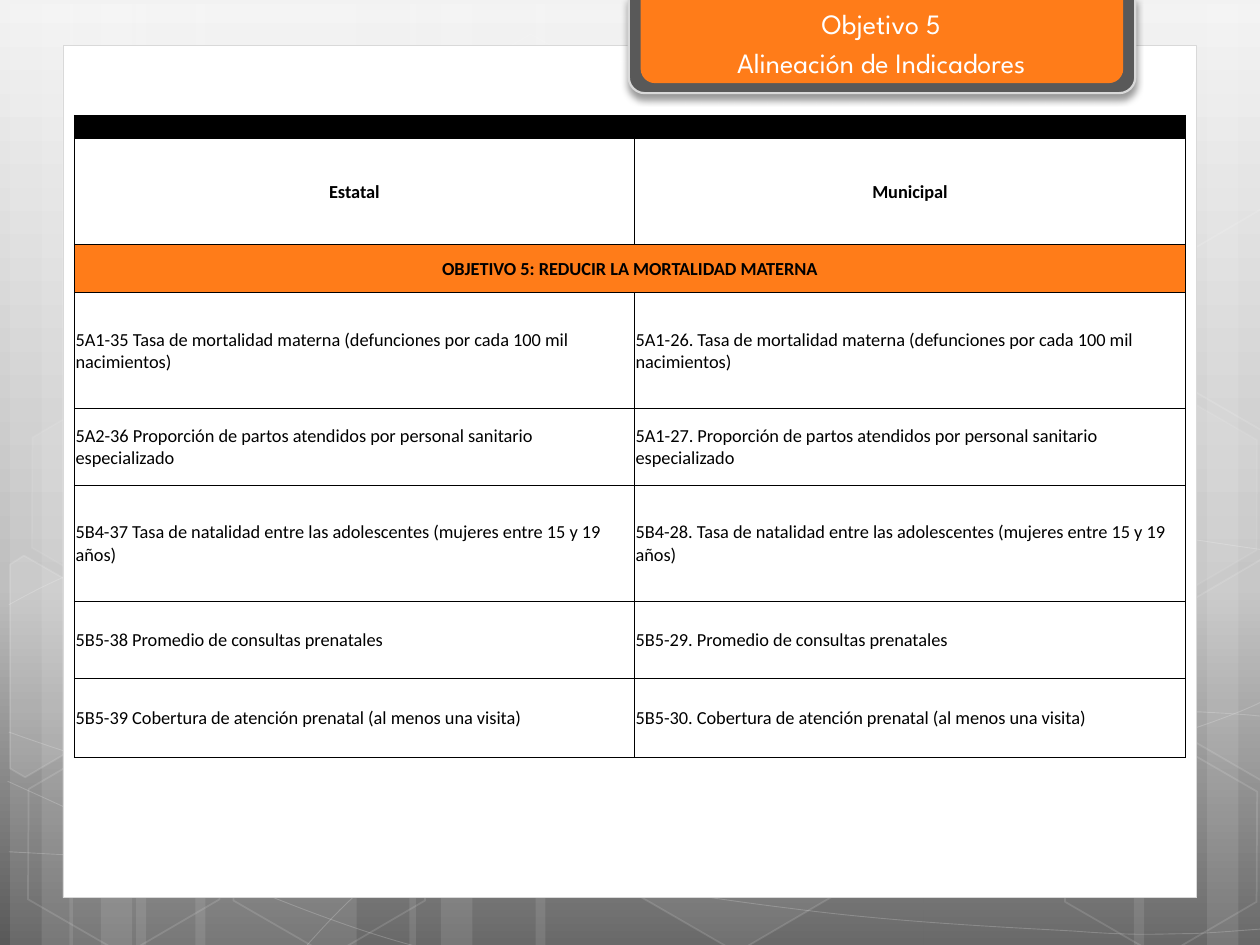
from copy import deepcopy

from lxml import etree
from pptx import Presentation
from pptx.dml.color import RGBColor
from pptx.enum.shapes import MSO_SHAPE
from pptx.enum.text import MSO_ANCHOR, PP_ALIGN
from pptx.oxml.ns import qn
from pptx.util import Inches, Pt

RECT, HEXAGON, TAB = MSO_SHAPE.RECTANGLE, MSO_SHAPE.HEXAGON, MSO_SHAPE.ROUND_2_SAME_RECTANGLE
CENTER, LEFT = PP_ALIGN.CENTER, PP_ALIGN.LEFT
TOP, MIDDLE = MSO_ANCHOR.TOP, MSO_ANCHOR.MIDDLE

# Backdrop, on a grid of 100 columns by 75 rows
BARS = [(10.8, 17.5), (0.8, 5), (3.3, 8.3), (15.5, 17.5), (5.5, 5), (8, 8.3),  # left, width
        (73.3, 17.5), (95.8, 5), (90, 8.3), (42.5, 30.8), (32.5, 5), (35, 8.3)]
# Segment kinds (C takes three points, L takes one), then the points
CURVES = [
    ("CCCC", [
        (0.7, 67.6), (6.1, 67.9), (11.5, 68.2), (19, 68.1), (26.5, 68), (35.8, 67.8), (45.8, 66.8),
        (55.8, 65.8), (70, 63.9), (79.2, 62), (88.3, 60.1), (97.7, 57.1), (100.7, 55.4)]),
    ("CCCC", [
        (0.7, 48), (3.6, 46.4), (6.5, 44.9), (12.1, 43.4), (17.8, 41.9), (25.9, 39.7), (34.7, 39),
        (43.6, 38.3), (54.4, 38.2), (65.4, 39), (76.4, 39.8), (94.7, 42.9), (100.7, 43.7)]),
    ("C", [(0.6, 62), (12.7, 67.5), (24.7, 73), (33.4, 75.2)]),
    ("CCCCCC", [
        (0.7, 58.1), (3.8, 59.2), (7, 60.3), (12.8, 61.9), (18.6, 63.4), (27.3, 65.9), (35.7, 67.6),
        (44, 69.3), (54.5, 71.1), (62.8, 72.1), (71.1, 73.2), (80, 73.6), (85.3, 73.9),
        (90.5, 74.3), (91.9, 74.1), (94.5, 74.1), (97.1, 74), (98.9, 73.8), (100.7, 73.7)]),
    ("CCCCCCCLCC", [
        (24.2, 75.2), (26, 73.2), (27.8, 71.2), (30.2, 69.4), (32.6, 67.6), (36, 65.6),
        (38.8, 64.2), (41.6, 62.8), (43.3, 62.2), (47, 61.2), (50.6, 60.2), (57.3, 58.8),
        (60.8, 58.1), (64.4, 57.4), (64.9, 57.4), (68, 57.2), (71.1, 56.9), (76, 56.6),
        (79.4, 56.5), (82.9, 56.4), (88.6, 56.5), (88.6, 56.5), (95.3, 56.5), (97.1, 56.6),
        (98.8, 56.7), (99.7, 56.8), (100.6, 56.9), (100.3, 56.8), (100.6, 56.9)]),
]
# Left, top, fill opacity, line opacity
HEXAGONS = [(33.4, 3.9, 4, 8), (49.7, 59.2, 6, 12), (1.1, 59.4, 0, 12), (1.4, 31.5, 7, 8),
            (17.4, 59.5, 0, 12), (75.3, 45.6, 10, 12), (83.4, 59.6, 0, 12), (83.4, 31.7, 7, 8)]
# Hexagons cut off by the slide edge: points, fill opacity
CUT_HEXAGONS = [
    ([(0.8, 44.8), (1.9, 44.1), (9.6, 48.5), (9.5, 57.3), (2, 61.7), (0.8, 61)], 10),
    ([(92.6, 48.8), (100.1, 44.4), (100.9, 44.9), (100.9, 61.6), (100.2, 62), (92.6, 57.6)], 4),
    ([(92.6, 21), (100.1, 16.6), (101, 17.1), (100.9, 33.8), (100.2, 34.2), (92.6, 29.8)], 0),
]

# Table: row height, fill, centred heading, texts (one text spans both columns)
ROWS = [
    (1.85, "000000", True, [""]),
    (8.4, "FFFFFF", True, ["Estatal", "Municipal"]),
    (3.8, "FF7C19", True, ["OBJETIVO 5: REDUCIR LA MORTALIDAD MATERNA"]),
    (9.2, "FFFFFF", False,
     ["5A1-35 Tasa de mortalidad materna (defunciones por cada 100 mil nacimientos)",
      "5A1-26. Tasa de mortalidad materna (defunciones por cada 100 mil nacimientos)"]),
    (6.1, "FFFFFF", False,
     ["5A2-36 Proporción de partos atendidos por personal sanitario especializado",
      "5A1-27. Proporción de partos atendidos por personal sanitario especializado"]),
    (9.2, "FFFFFF", False,
     ["5B4-37 Tasa de natalidad entre las adolescentes (mujeres entre 15 y 19 años)",
      "5B4-28. Tasa de natalidad entre las adolescentes (mujeres entre 15 y 19 años)"]),
    (6.1, "FFFFFF", False, ["5B5-38 Promedio de consultas prenatales",
                            "5B5-29. Promedio de consultas prenatales"]),
    (6.3, "FFFFFF", False, ["5B5-39 Cobertura de atención prenatal (al menos una visita)",
                            "5B5-30. Cobertura de atención prenatal (al menos una visita)"]),
]


def rgb(color):
    return RGBColor.from_string(color)


def sub(parent, tag, **attrs):
    return etree.SubElement(parent, qn(tag), {k: str(v) for k, v in attrs.items()})


class Deck:
    COLS, ROWS = 100, 75
    TITLE_FONT, BODY_FONT = "League Spartan", "Calibri"

    def __init__(self, prs):
        self.s = prs.slides.add_slide(prs.slide_layouts[6])
        self.unit_x, self.unit_y = prs.slide_width / self.COLS, prs.slide_height / self.ROWS

    def x(self, cols):
        return round(cols * self.unit_x)

    def y(self, rows):
        return round(rows * self.unit_y)

    def box(self, left, top, width, height):
        return self.x(left), self.y(top), self.x(width), self.y(height)

    def background(self, stops):
        fill = self.s.background.fill
        fill.gradient()
        fill.gradient_angle = 270
        gs_list = fill.gradient_stops[0]._gs.getparent()
        gs_list.insert(1, deepcopy(gs_list[0]))
        for stop, (position, color) in zip(fill.gradient_stops, stops):
            stop.position = position
            stop.color.rgb = rgb(color)

    def paint(self, fill, color, opacity):
        if not opacity:
            fill.background()
            return
        fill.solid()
        fill.fore_color.rgb = rgb(color)
        if opacity < 100:
            sub(fill.fore_color._xFill[0], "a:alpha", val=opacity * 1000)

    def style(self, sp, fill="FFFFFF", opacity=100, line="FFFFFF", line_opacity=0, width=1):
        sp.shadow.inherit = False
        self.paint(sp.fill, fill, opacity)
        self.paint(sp.line.fill, line, line_opacity)
        if line_opacity:
            sp.line.width = Pt(width)
        return sp

    def shape(self, kind, *box, **style):
        return self.style(self.s.shapes.add_shape(kind, *self.box(*box)), **style)

    def outline(self, points, close=False, **style):
        dots = [(self.x(a), self.y(b)) for a, b in points]
        builder = self.s.shapes.build_freeform(*dots[0])
        builder.add_line_segments(dots[1:], close=close)
        return self.style(builder.convert_to_shape(), **style)

    def curve(self, kinds, points, **style):
        sp = self.outline(points, opacity=0, **style)
        steps = iter(list(sp._element.iter(qn("a:lnTo"))))
        for kind in kinds:
            first = next(steps)
            if kind == "C":  # merge three line steps into one Bezier segment
                first.tag = qn("a:cubicBezTo")
                for _ in range(2):
                    step = next(steps)
                    first.append(step[0])
                    step.getparent().remove(step)

    def tab(self, *box, shadow=False, **style):
        sp = self.shape(TAB, *box, **style)
        sp._element.spPr.find(qn("a:xfrm")).set("flipV", "1")
        if shadow:
            outer = sub(sp._element.spPr.find(qn("a:effectLst")), "a:outerShdw", blurRad=Pt(4),
                        dist=Pt(3), dir=5400000, algn="t", rotWithShape=0)
            sub(sub(outer, "a:srgbClr", val="000000"), "a:alpha", val=40000)

    def run(self, p, text, font, size, color, bold=False):
        r = p.add_run()
        r.text = text
        r.font.name, r.font.size, r.font.bold = font, Pt(size), bold
        r.font.color.rgb = rgb(color)

    def title(self, lines, *box):
        tf = self.s.shapes.add_textbox(*self.box(*box)).text_frame
        tf.word_wrap, tf.vertical_anchor = True, TOP
        for i, text in enumerate(lines):
            p = tf.add_paragraph() if i else tf.paragraphs[0]
            p.alignment = CENTER
            if i:
                p.space_before = Pt(3.2)
            self.run(p, text, self.TITLE_FONT, 16, "FFFFFF")

    def cell(self, cell, text, fill, heading):
        cell.margin_left = cell.margin_top = cell.margin_right = Inches(0.01)
        cell.margin_bottom = 0
        cell.vertical_anchor = MIDDLE
        p = cell.text_frame.paragraphs[0]
        p.alignment = CENTER if heading else LEFT
        if text:
            self.run(p, text, self.BODY_FONT, 10.5, "000000", heading)
        else:
            sub(p._p, "a:endParaRPr", sz=1050)
        tc_pr = cell._tc.get_or_add_tcPr()
        for side in ("a:lnL", "a:lnR", "a:lnT", "a:lnB"):
            sub(sub(sub(tc_pr, side, w=Pt(0.5)), "a:solidFill"), "a:srgbClr", val="000000")
        cell.fill.solid()
        cell.fill.fore_color.rgb = rgb(fill)

    def table(self, left, top, widths, rows):
        height = sum(row[0] for row in rows)
        table = self.s.shapes.add_table(len(rows), len(widths),
                                        *self.box(left, top, sum(widths), height)).table
        table.first_row = table.horz_banding = False
        for column, width in zip(table.columns, widths):
            column.width = self.x(width)
        for i, (height, fill, heading, texts) in enumerate(rows):
            table.rows[i].height = self.y(height)
            if len(texts) == 1:
                table.cell(i, 0).merge(table.cell(i, len(widths) - 1))
            for j in range(len(widths)):
                self.cell(table.cell(i, j), texts[j] if j < len(texts) else "", fill, heading)


def main():
    prs = Presentation()
    prs.slide_width, prs.slide_height = Inches(10), Inches(7.5)
    deck = Deck(prs)

    # Backdrop
    deck.background([(0, "F2F2F2"), (0.62, "BFBFBF"), (1, "595959")])
    for left, width in BARS:
        deck.shape(RECT, left, 0.3, width, 75, opacity=10)
    for kinds, points in CURVES:
        deck.curve(kinds, points, line_opacity=20, width=0.5)
    for left, top, opacity, line_opacity in HEXAGONS:
        sp = deck.shape(HEXAGON, left, top, 17.5, 15.2, opacity=opacity, line_opacity=line_opacity)
        sp.rotation = 30
        sp.adjustments[0], sp.adjustments[1] = 0.285, 1.155
    for points, opacity in CUT_HEXAGONS:
        deck.outline(points, close=True, opacity=opacity, line_opacity=12)

    # Page and title tab
    deck.shape(RECT, 5, 3.6, 90, 67.65, line="D9D9D9", line_opacity=100, width=0.5)
    deck.tab(49.9, -0.2, 40.2, 7.6, shadow=True, fill="595959", line="D9D9D9",
             line_opacity=100, width=1.25)
    deck.tab(50.85, -0.2, 38.3, 6.8, fill="FF7C19")

    # Indicators
    deck.table(5.9, 9.15, [44.45, 43.75], ROWS)
    deck.title(["Objetivo 5", "Alineación de Indicadores"], 49.1, 0, 41.7, 7.1)
    prs.save("out.pptx")


if __name__ == "__main__":
    main()
